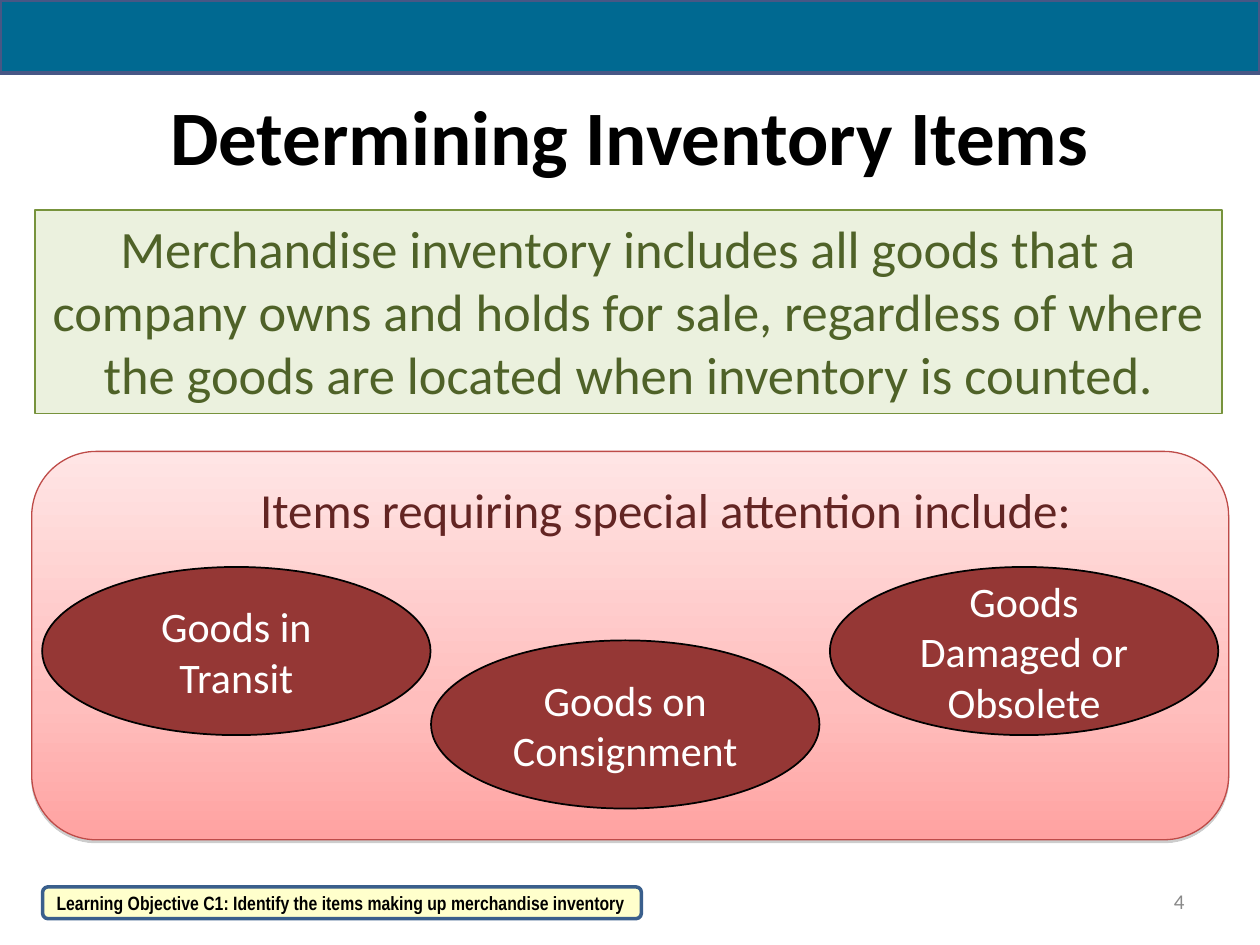
from lxml.etree import SubElement
from pptx import Presentation
from pptx.dml.color import RGBColor
from pptx.enum.shapes import MSO_SHAPE as Shape
from pptx.enum.text import MSO_ANCHOR as Anchor, PP_ALIGN as Align
from pptx.oxml.ns import qn
from pptx.util import Cm, Pt
from copy import deepcopy
from dataclasses import dataclass

# Content
TITLE = "Determining Inventory Items"
DEFINITION = ("Merchandise inventory includes all goods that a company owns and holds "
              "for sale, regardless of where the goods are located when inventory is counted.")
ATTENTION = "Items requiring special attention include:"
ITEMS = ["Goods in Transit", "Goods on Consignment", "Goods Damaged or Obsolete"]
OBJECTIVE = "Learning Objective C1: Identify the items making up merchandise inventory"
PAGE = "4"


@dataclass(frozen=True)
class Theme:
    font: str = "Calibri"
    narrow: str = "Arial Narrow"
    black: str = "000000"
    white: str = "FFFFFF"
    grey: str = "898989"
    band: str = "006991"
    band_line: str = "475785"
    green: str = "EBF1DE"
    green_line: str = "77933C"
    green_text: str = "4F6228"
    red: str = "953735"
    red_line: str = "BE4B48"
    red_text: str = "632523"
    panel: tuple = ((0, "FFE5E5"), (0.65, "FFBEBD"), (1, "FFA2A1"))
    shadow: str = "808080"
    yellow: str = "FFFFCC"
    yellow_line: str = "3A5F8C"
    title_size: int = 44
    definition_size: int = 30
    attention_size: int = 28
    item_size: int = 24
    page_size: int = 12
    objective_size: int = 11


T = Theme()
rgb = RGBColor.from_string

deck = Presentation()
deck.slide_width, deck.slide_height = Cm(25.4), Cm(19.05)
slide = deck.slides.add_slide(deck.slide_layouts[6])


def add_box(kind, place, line, weight, fill=None):
    box = slide.shapes.add_shape(kind, *map(Cm, place))
    box.shadow.inherit = False
    if fill:
        box.fill.solid()
        box.fill.fore_color.rgb = rgb(fill)
    box.line.color.rgb = rgb(line)
    box.line.width = Pt(weight)
    return box


def write(target, text, *, size, color, font=T.font, bold=False,
          align=Align.CENTER, anchor=Anchor.MIDDLE, wrap=True):
    """Put text in a shape, or in a new text box when target is a place."""
    if isinstance(target, tuple):
        target = slide.shapes.add_textbox(*map(Cm, target))
    frame = target.text_frame
    frame.word_wrap = wrap
    frame.vertical_anchor = anchor
    paragraph = frame.paragraphs[0]
    paragraph.alignment = align
    run = paragraph.add_run()
    run.text = text
    run.font.name, run.font.size, run.font.bold = font, Pt(size), bold
    run.font.color.rgb = rgb(color)


def fill_gradient(box, colors):
    box.fill.gradient()
    box.fill.gradient_angle = 270
    stop_list = box.fill._fill._gradFill.gsLst
    stop_list.insert(1, deepcopy(stop_list[0]))
    for stop, (position, color) in zip(box.fill.gradient_stops, colors):
        stop.position = position
        stop.color.rgb = rgb(color)


def drop_shadow(box, color):
    effects = box._element.spPr.find(qn("a:effectLst"))
    shadow = SubElement(effects, qn("a:outerShdw"), blurRad="0", dist=str(Pt(1.6)),
                        dir="5400000", rotWithShape="0")
    tone = SubElement(shadow, qn("a:srgbClr"), val=color)
    SubElement(tone, qn("a:alpha"), val="38000")


# Attention panel
panel = add_box(Shape.ROUNDED_RECTANGLE, (0.64, 9.1, 24.13, 7.83), T.red_line, 0.75)
fill_gradient(panel, T.panel)
drop_shadow(panel, T.shadow)

# Title and definition
write((1.27, 1.48, 22.86, 2.46), TITLE, size=T.title_size, color=T.black, bold=True)
definition = add_box(Shape.RECTANGLE, (0.71, 4.23, 23.92, 4.11), T.green_line, 1, T.green)
write(definition, DEFINITION, size=T.definition_size, color=T.green_text, anchor=Anchor.TOP)

# Ovals: the middle one sits lower
OVAL_W, OVAL_H = 7.83, 3.39
OVAL_LEFT, OVAL_STEP = 0.85, 7.94
OVAL_TOP, OVAL_DROP = 11.43, 1.48
for index, item in enumerate(ITEMS):
    place = (OVAL_LEFT + index * OVAL_STEP - (0.1 if index == 1 else 0),
             OVAL_TOP + index % 2 * OVAL_DROP, OVAL_W, OVAL_H)
    oval = add_box(Shape.OVAL, place, T.black, 1, T.red)
    write(oval, item, size=T.item_size, color=T.white)
write((4.88, 9.55, 17.07, 1.45), ATTENTION, size=T.attention_size, color=T.red_text,
      anchor=Anchor.TOP, wrap=False)

# Top band
add_box(Shape.RECTANGLE, (0, 0, 25.4, 1.48), T.band_line, 2.25, T.band)

# Footer
write((18.21, 17.65, 5.92, 1.02), PAGE, size=T.page_size, color=T.grey, align=Align.RIGHT)
objective = add_box(Shape.ROUNDED_RECTANGLE, (0.86, 17.88, 12.07, 0.64),
                    T.yellow_line, 2, T.yellow)
write(objective, OBJECTIVE, size=T.objective_size, color=T.black, font=T.narrow,
      bold=True, align=Align.LEFT, wrap=False)

deck.save("out.pptx")
